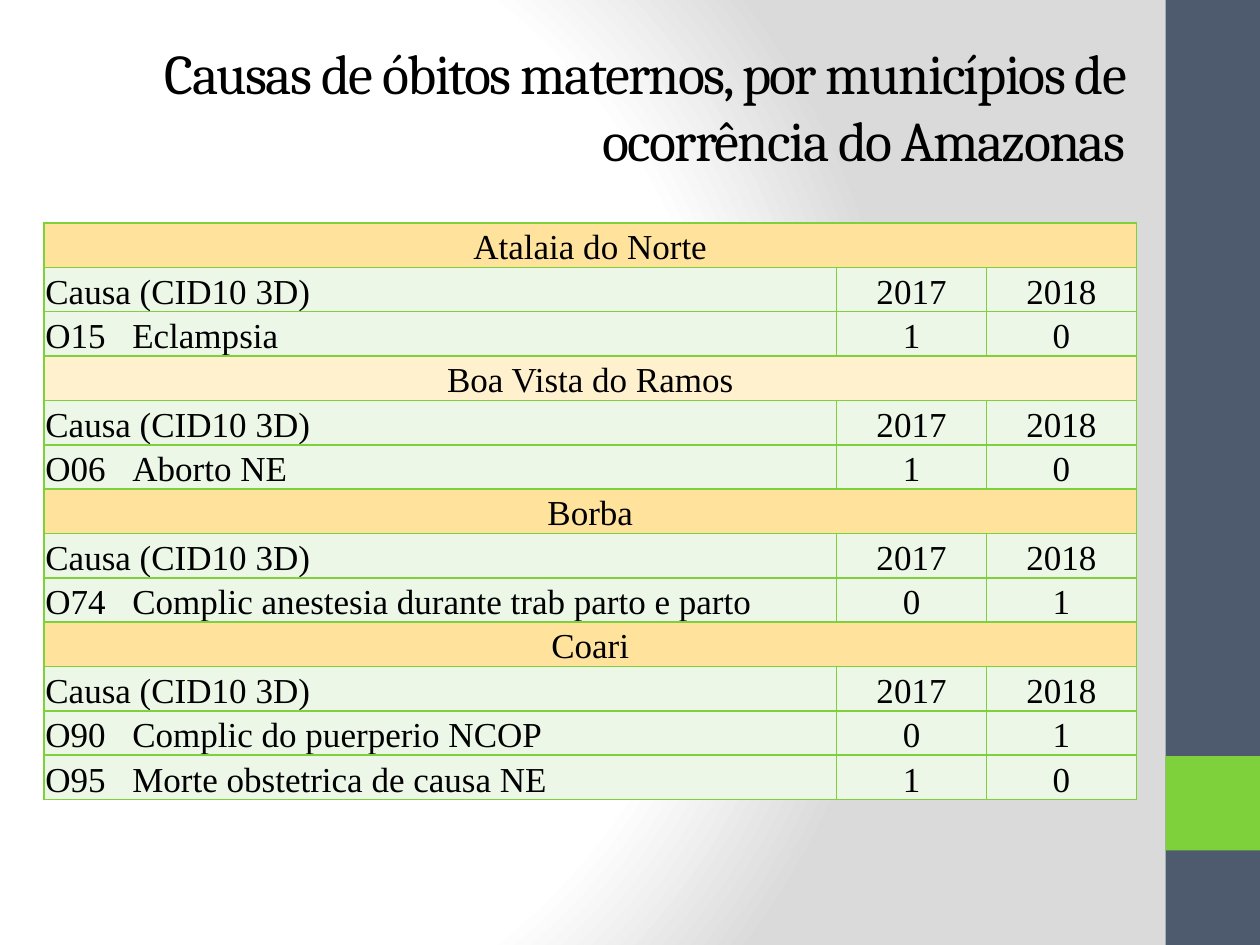
from pptx import Presentation, util as u
from pptx.dml.color import RGBColor
from pptx.enum import shapes, text
from pptx.oxml import parse_xml
from pptx.oxml.ns import nsdecls, qn

BLACK = RGBColor(0, 0, 0)
SLATE = RGBColor(0x4E, 0x5B, 0x6F)
GREEN = RGBColor(0x7F, 0xD1, 0x3B)
GOLD = RGBColor(0xFF, 0xE3, 0x9D)
CREAM = RGBColor(0xFF, 0xF1, 0xCE)
MINT = RGBColor(0xEC, 0xF7, 0xE8)

HEADER = ("Causa (CID10 3D)", "2017", "2018")
TOWNS = [
    ("Atalaia do Norte", GOLD, [("O15\tEclampsia", "1", "0")]),
    ("Boa Vista do Ramos", CREAM, [("O06\tAborto NE", "1", "0")]),
    ("Borba", GOLD, [("O74\tComplic anestesia durante trab parto e parto", "0", "1")]),
    ("Coari", GOLD, [("O90\tComplic do puerperio NCOP", "0", "1"),
                     ("O95\tMorte obstetrica de causa NE", "1", "0")]),
]
COLUMNS = (6.29, 1.19, 1.19)


class Deck:
    title_font, title_size = "Cambria", 32
    body_font, body_size = "Times New Roman", 20
    code_tab = u.Inches(0.69)

    def __init__(self, s):
        self.s = s

    def background(self, stops, focus):
        """Circular gradient; focus holds left, top, right, bottom in percent."""
        self.s.background.fill.gradient()
        old = self.s._element.find(".//" + qn("a:gradFill"))
        gs = "".join(f'<a:gs pos="{pos * 1000}"><a:srgbClr val="{color}"/></a:gs>'
                     for pos, color in stops)
        left, top, right, bottom = (v * 1000 for v in focus)
        new = parse_xml(
            f'<a:gradFill rotWithShape="1" {nsdecls("a")}><a:gsLst>{gs}</a:gsLst>'
            f'<a:path path="circle"><a:fillToRect l="{left}" t="{top}" r="{right}" '
            f'b="{bottom}"/></a:path></a:gradFill>')
        old.getparent().replace(old, new)

    def block(self, x, y, w, h, color):
        sp = self.s.shapes.add_shape(shapes.MSO_SHAPE.RECTANGLE, u.Inches(x),
                                     u.Inches(y), u.Inches(w), u.Inches(h))
        sp.shadow.inherit = False
        sp.fill.solid()
        sp.fill.fore_color.rgb = color
        sp.line.fill.background()

    def run(self, p, content, font, size):
        r = p.add_run()
        r.text = content
        r.font.name = font
        r.font.size = u.Pt(size)
        r.font.color.rgb = BLACK
        return r

    def title(self, x, y, w, h, content):
        sp = self.s.shapes.add_textbox(u.Inches(x), u.Inches(y), u.Inches(w), u.Inches(h))
        tf = sp.text_frame
        tf.word_wrap = True
        tf.vertical_anchor = text.MSO_ANCHOR.MIDDLE
        p = tf.paragraphs[0]
        p.alignment = text.PP_ALIGN.RIGHT
        r = self.run(p, content, self.title_font, self.title_size)
        r.font._element.set("spc", "-100")

    def cell(self, cell, content, color, align):
        cell.margin_left = cell.margin_right = cell.margin_top = u.Inches(0.01)
        cell.margin_bottom = 0
        cell.vertical_anchor = text.MSO_ANCHOR.BOTTOM
        cell.fill.solid()
        cell.fill.fore_color.rgb = color
        tcPr = cell._tc.get_or_add_tcPr()
        for i, side in enumerate(("lnL", "lnR", "lnT", "lnB")):
            tcPr.insert(i, parse_xml(
                f'<a:{side} w="{u.Pt(1)}" {nsdecls("a")}><a:solidFill>'
                f'<a:srgbClr val="{GREEN}"/></a:solidFill></a:{side}>'))
        p = cell.text_frame.paragraphs[0]
        if "\t" in content:
            p._p.get_or_add_pPr().append(parse_xml(
                f'<a:tabLst {nsdecls("a")}><a:tab pos="{self.code_tab}" algn="l"/></a:tabLst>'))
        p.alignment = align
        if content:
            self.run(p, content, self.body_font, self.body_size)

    def table(self, x, y, h, columns, towns):
        rows = []
        for town, color, causes in towns:
            rows.append(((town, "", ""), color))
            rows += [(values, MINT) for values in (HEADER, *causes)]
        frame = self.s.shapes.add_table(len(rows), len(columns), u.Inches(x), u.Inches(y),
                                        u.Inches(sum(columns)), u.Inches(h))
        table = frame.table
        table.first_row = table.horz_banding = False
        for column, width in zip(table.columns, columns):
            column.width = u.Inches(width)
        for i, (values, color) in enumerate(rows):
            is_town = color != MINT
            for j, value in enumerate(values):
                align = (text.PP_ALIGN.JUSTIFY if j == 0 and not is_town
                         else text.PP_ALIGN.CENTER)
                self.cell(table.cell(i, j), value, color, align)
            if is_town:
                table.cell(i, 0).merge(table.cell(i, len(columns) - 1))


def main():
    prs = Presentation()
    prs.slide_width, prs.slide_height = u.Inches(10), u.Inches(7.5)
    deck = Deck(prs.slides.add_slide(prs.slide_layouts[6]))
    deck.background([(0, "FFFFFF"), (75, "FFFFFF"), (100, "DADADA")], (20, 50, 100, 50))
    deck.block(9.25, 0, 0.75, 7.5, SLATE)
    deck.block(9.25, 6, 0.75, 0.75, GREEN)
    deck.title(-0.35, 0.21, 9.38, 1.25,
               "Causas de óbitos maternos, por municípios de ocorrência do Amazonas")
    deck.table(0.35, 1.77, 4.58, COLUMNS, TOWNS)
    prs.save("out.pptx")


if __name__ == "__main__":
    main()
